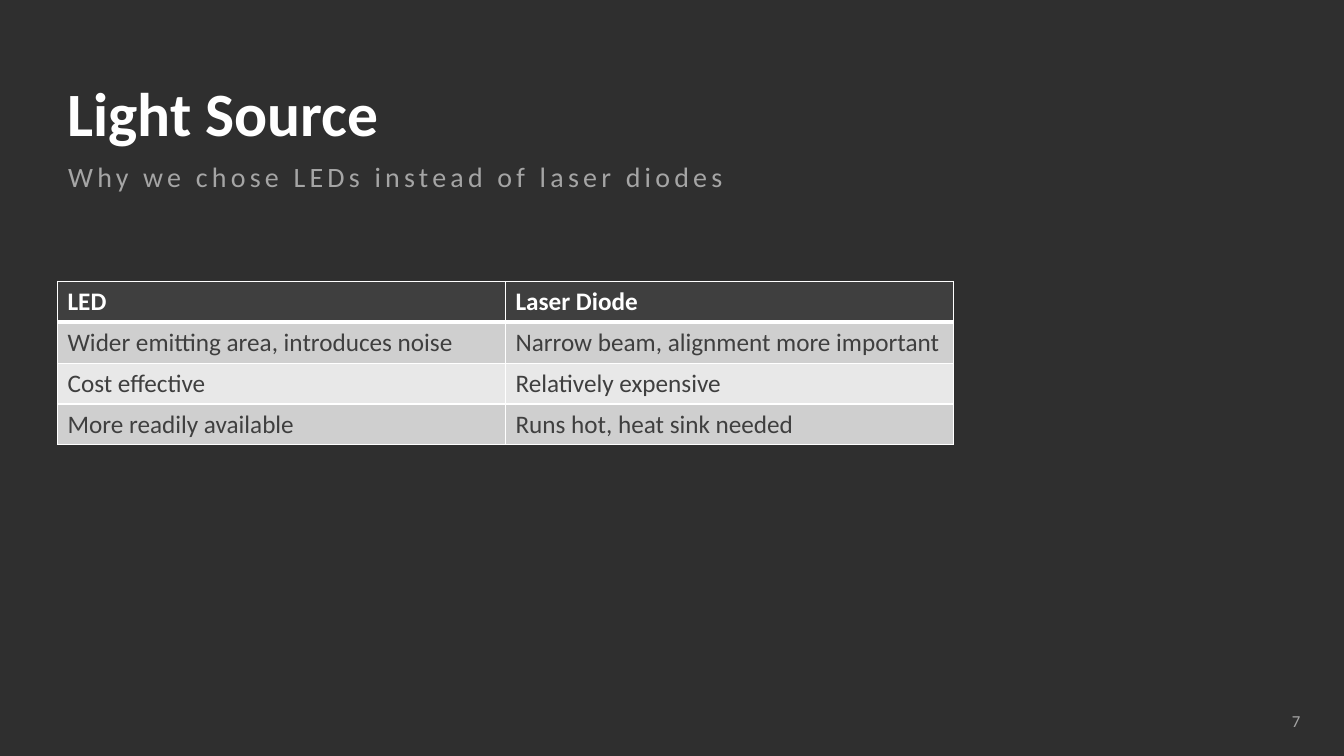
"""Build the light source slide comparing LEDs with laser diodes."""
from dataclasses import dataclass

from lxml.etree import SubElement
from pptx import Presentation
from pptx.dml.color import RGBColor
from pptx.enum.text import MSO_ANCHOR, PP_ALIGN
from pptx.oxml.ns import qn
from pptx.util import Cm, Pt


@dataclass(frozen=True)
class Theme:
    font: str = "Calibri"
    background: str = "2F2F2F"
    white: str = "FFFFFF"
    muted: str = "A5A5A5"
    dark: str = "3F3F3F"
    bands: tuple = ("CFCFCF", "E8E8E8")
    title: int = 44
    subtitle: int = 20
    body: int = 18
    number: int = 12


theme = Theme()


def write(tf, text, size, color, bold=False, align=PP_ALIGN.LEFT,
          anchor=MSO_ANCHOR.TOP, line=1.0, spacing=0):
    tf.word_wrap = True
    tf.vertical_anchor = anchor
    p = tf.paragraphs[0]
    p.alignment = align
    p.line_spacing = line
    r = p.add_run()
    r.text = text
    r.font.name = theme.font
    r.font.size = Pt(size)
    r.font.bold = bold
    r.font.color.rgb = RGBColor.from_string(color)
    if spacing:
        r.font._element.set("spc", str(spacing * 100))


def add_border(cell, side, width):
    ln = SubElement(cell._tc.get_or_add_tcPr(), qn(f"a:ln{side}"), w=str(Pt(width)))
    fill = SubElement(ln, qn("a:solidFill"))
    SubElement(fill, qn("a:srgbClr"), val=theme.white)


prs = Presentation()
prs.slide_width, prs.slide_height = Cm(33.87), Cm(19.05)
s = prs.slides.add_slide(prs.slide_layouts[6])
s.background.fill.solid()
s.background.fill.fore_color.rgb = RGBColor.from_string(theme.background)

number = s.shapes.add_textbox(Cm(30.96), Cm(17.65), Cm(2.06), Cm(1.02))
write(number.text_frame, "7", theme.number, theme.muted,
      align=PP_ALIGN.RIGHT, anchor=MSO_ANCHOR.MIDDLE)

title = s.shapes.add_textbox(Cm(1.45), Cm(0.58), Cm(23.14), Cm(3.2))
title.text_frame.margin_bottom = 0
write(title.text_frame, "Light Source", theme.title, theme.white,
      bold=True, anchor=MSO_ANCHOR.BOTTOM, line=0.9)

subtitle = s.shapes.add_textbox(Cm(1.47), Cm(3.99), Cm(20.4), Cm(1.7))
write(subtitle.text_frame, "Why we chose LEDs instead of laser diodes",
      theme.subtitle, theme.muted, line=0.9, spacing=3)

rows = [
    ("LED", "Laser Diode"),
    ("Wider emitting area, introduces noise", "Narrow beam, alignment more important"),
    ("Cost effective", "Relatively expensive"),
    ("More readily available", "Runs hot, heat sink needed"),
]
row_height = 1.03
table = s.shapes.add_table(len(rows), 2, Cm(1.45), Cm(7.09),
                           Cm(22.58), Cm(row_height * len(rows))).table
for i, row in enumerate(rows):
    header = i == 0
    table.rows[i].height = Cm(row_height)
    for j, text in enumerate(row):
        cell = table.cell(i, j)
        for side in "LRTB":
            thick = (side == "B" and header) or (side == "T" and i == 1)
            add_border(cell, side, 3 if thick else 1)
        cell.fill.solid()
        cell.fill.fore_color.rgb = RGBColor.from_string(
            theme.dark if header else theme.bands[(i - 1) % 2])
        write(cell.text_frame, text, theme.body,
              theme.white if header else theme.dark, bold=header)

prs.save("out.pptx")
